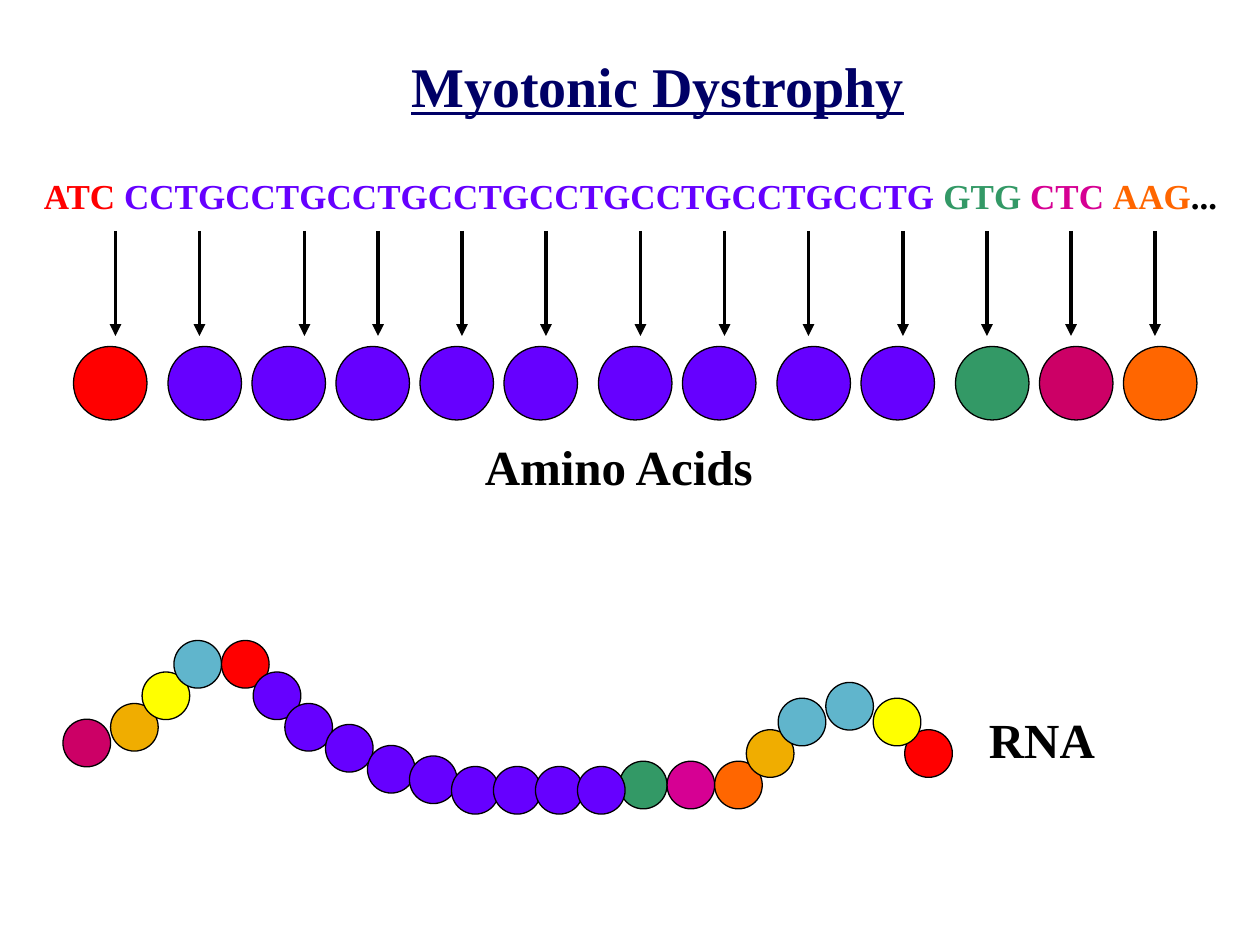
from typing import NamedTuple

from lxml.etree import SubElement
from pptx import Presentation
from pptx.dml.color import RGBColor
from pptx.enum.shapes import MSO_AUTO_SHAPE_TYPE as Form, MSO_CONNECTOR as Link
from pptx.enum.text import MSO_AUTO_SIZE as Fit
from pptx.oxml.ns import qn
from pptx.util import Pt

FONT = "Times New Roman"
BLACK, NAVY, RED, VIOLET = "000000", "000066", "FF0000", "6600FF"
GREEN, PINK, ROSE, ORANGE = "339966", "D60093", "CC0066", "FF6600"
GOLD, YELLOW, BLUE = "F0AD00", "FFFF00", "60B5CC"


class Run(NamedTuple):
    text: str
    color: str


class Label(NamedTuple):
    left: float
    top: float
    width: float
    height: float
    size: float
    runs: list[Run]
    under: bool = False


class Bead(NamedTuple):
    left: float
    top: float
    color: str


class Acid(NamedTuple):
    left: float
    arrow: float
    color: str


def tint(code: str) -> RGBColor:
    return RGBColor.from_string(code)


def add_label(shapes, label: Label) -> None:
    box = shapes.add_textbox(Pt(label.left), Pt(label.top),
                             Pt(label.width), Pt(label.height))
    frame = box.text_frame
    frame.word_wrap = False
    frame.auto_size = Fit.SHAPE_TO_FIT_TEXT
    para = frame.paragraphs[0]
    font = para.font
    font.name, font.size, font.bold = FONT, Pt(label.size), True
    font.underline = label.under
    for part in label.runs:
        run = para.add_run()
        run.text = part.text
        run.font.color.rgb = tint(part.color)


def add_bead(shapes, bead: Bead, size: float) -> None:
    oval = shapes.add_shape(Form.OVAL, Pt(bead.left), Pt(bead.top),
                            Pt(size), Pt(size))
    oval.shadow.inherit = False
    oval.fill.solid()
    oval.fill.fore_color.rgb = tint(bead.color)
    oval.line.color.rgb = tint(BLACK)
    oval.line.width = Pt(0.75)


def add_arrow(shapes, x: float, top: float, end: float) -> None:
    arrow = shapes.add_connector(Link.STRAIGHT, Pt(x), Pt(top), Pt(x), Pt(end))
    arrow.line.color.rgb = tint(BLACK)
    arrow.line.width = Pt(2.25)
    SubElement(arrow.line._get_or_add_ln(), qn("a:tailEnd"), type="triangle")
    SubElement(arrow._element.spPr, qn("a:effectLst"))


TITLE = Label(228, 26, 296, 45, 32, [Run("Myotonic Dystrophy", NAVY)], True)
RNA = Label(558, 402, 76, 41, 28, [Run("RNA", BLACK)])
AMINO = Label(270, 246, 169, 41, 28, [Run("Amino Acids", BLACK)])
CODE = Label(18, 96, 690.5, 31.5, 20, [
    Run("ATC ", RED),
    Run("CCTG" * 8 + " ", VIOLET),
    Run("GTG ", GREEN),
    Run("CTC ", PINK),
    Run("AAG", ORANGE),
    Run("...", BLACK),
])

# Each amino acid with the arrow that points to it
ACIDS = [
    Acid(42, 66, RED),
    *(Acid(left, arrow, VIOLET) for left, arrow in [
        (96, 114), (144, 174), (192, 216), (240, 264), (288, 312),
        (342, 366), (390, 414), (444, 462), (492, 516)]),
    Acid(546, 564, GREEN),
    Acid(594, 612, ROSE),
    Acid(642, 660, ORANGE),
]

# Strand beads from back to front: left part, right part, then the repeats
STRAND = [
    Bead(36, 411, ROSE), Bead(63.2, 402, GOLD), Bead(81.2, 384, YELLOW),
    Bead(99.4, 366, BLUE), Bead(126.6, 366, RED), Bead(144.7, 384, VIOLET),
    Bead(162.8, 402, VIOLET), Bead(186, 414, VIOLET),
    Bead(517, 417, RED), Bead(354, 435, GREEN), Bead(381.2, 435, PINK),
    Bead(408.4, 435, ORANGE), Bead(426.5, 417, GOLD), Bead(444.7, 399, BLUE),
    Bead(471.9, 390, BLUE), Bead(499, 399, YELLOW),
    *(Bead(210 + 24 * i, top, VIOLET)
      for i, top in enumerate([426, 432, 438, 438, 438, 438])),
]


def main() -> None:
    deck = Presentation()
    deck.slide_width, deck.slide_height = Pt(720), Pt(540)
    shapes = deck.slides.add_slide(deck.slide_layouts[6]).shapes

    # Headings
    add_label(shapes, TITLE)
    add_label(shapes, RNA)

    # Code, arrows and amino acids
    chain = shapes.add_group_shape().shapes
    add_label(chain, AMINO)
    add_label(chain, CODE)
    for acid in ACIDS:
        add_bead(chain, Bead(acid.left, 198, acid.color), 42)
        add_arrow(chain, acid.arrow, 132, 192)

    # RNA strand
    strand = shapes.add_group_shape().shapes
    for bead in STRAND:
        add_bead(strand, bead, 27.2)

    deck.save("out.pptx")


if __name__ == "__main__":
    main()
